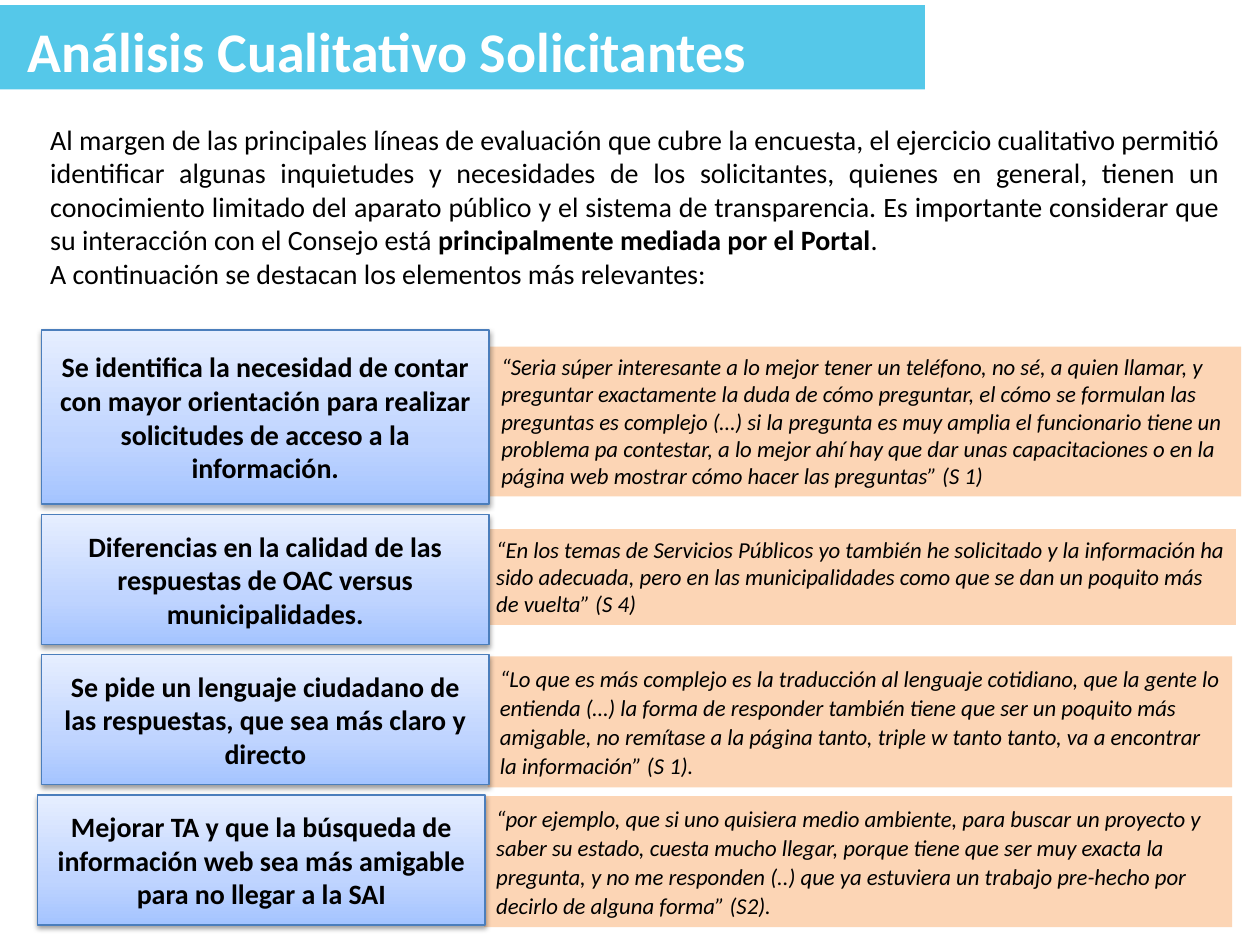
from lxml import etree
from pptx import Presentation
from pptx.dml.color import RGBColor
from pptx.enum.shapes import MSO_SHAPE
from pptx.enum.text import MSO_ANCHOR, PP_ALIGN
from pptx.oxml.ns import qn
from pptx.util import Pt

RECTANGLE = MSO_SHAPE.RECTANGLE
TOP, MIDDLE = MSO_ANCHOR.TOP, MSO_ANCHOR.MIDDLE
LEFT, CENTER, JUSTIFY = PP_ALIGN.LEFT, PP_ALIGN.CENTER, PP_ALIGN.JUSTIFY
FONT = "Calibri"
CYAN, PEACH, BLUE = "55C8E9", "FCD5B5", "4B7EBC"
BLACK, WHITE = "000000", "FFFFFF"
TOPIC_STOPS = [(0, "A4C4FF"), (35, "BFD4FF"), (100, "E6EEFF")]

TITLE = "Análisis Cualitativo Solicitantes"
# Each paragraph of the introduction: alignment and (text, bold) pieces
INTRO = [
    (JUSTIFY, [
        ("Al margen de las principales líneas de evaluación que cubre la encuesta, "
         "el ejercicio cualitativo permitió identificar algunas inquietudes y "
         "necesidades de los solicitantes, quienes en general, tienen un conocimiento "
         "limitado del aparato público y el sistema de transparencia. Es importante "
         "considerar que su interacción con el Consejo está ", False),
        ("principalmente mediada por el Portal", True),
        (". ", False),
    ]),
    (LEFT, [("A continuación se destacan los elementos más relevantes:", False)]),
]
# Topic, its left and height; quote, its (left, top, width, height); loose spacing
ROWS = [
    ("Se identifica la necesidad de contar con mayor orientación para realizar "
     "solicitudes de acceso a la información.", 23.8, 99.4,
     "“Seria súper interesante a lo mejor tener un teléfono, no sé, a quien llamar, "
     "y preguntar exactamente la duda de cómo preguntar, el cómo se formulan las "
     "preguntas es complejo (…) si la pregunta es muy amplia el funcionario tiene un "
     "problema pa contestar, a lo mejor ahí hay que dar unas capacitaciones o en la "
     "página web mostrar cómo hacer las preguntas” (S 1)",
     (279.4, 198, 429.8, 85.7), False),
    ("Diferencias en la calidad de las respuestas de OAC versus municipalidades.",
     23.8, 74.2,
     "“En los temas de Servicios Públicos yo también he solicitado y la información "
     "ha sido adecuada, pero en las municipalidades como que se dan un poquito más "
     "de vuelta” (S 4)",
     (276.5, 302.4, 429.8, 54.7), False),
    ("Se pide un lenguaje ciudadano de las respuestas, que sea más claro y directo",
     23.8, 74.2,
     "“Lo que es más complejo es la traducción al lenguaje cotidiano, que la gente lo "
     "entienda (…) la forma de responder también tiene que ser un poquito más "
     "amigable, no remítase a la página tanto, triple w tanto tanto, va a encontrar "
     "la información” (S 1).",
     (278.6, 375.1, 425.5, 74.9), True),
    ("Mejorar TA y que la búsqueda de información web sea más amigable para no "
     "llegar a la SAI", 21.6, 74.2,
     "“por ejemplo, que si uno quisiera medio ambiente, para buscar un proyecto y "
     "saber su estado, cuesta mucho llegar, porque tiene que ser muy exacta la "
     "pregunta, y no me responden (..) que ya estuviera un trabajo pre-hecho por "
     "decirlo de alguna forma” (S2).",
     (276.5, 455, 427.7, 74.9), True),
]
TOPICS_TOP, TOPIC_WIDTH, TOPIC_GAP = 188.6, 255.6, 6


def color(value):
    return RGBColor.from_string(value)


def style(font, size, value, bold=False, italic=False):
    font.name, font.size = FONT, Pt(size)
    font.bold, font.italic = bold, italic
    font.color.rgb = color(value)


def add_box(page, place, fill=None):
    box = page.shapes.add_shape(RECTANGLE, *map(Pt, place))
    box.shadow.inherit = False
    box.line.fill.background()
    if fill:
        box.fill.solid()
        box.fill.fore_color.rgb = color(fill)
    return box


def write(box, text, size, value, align, anchor, **look):
    frame = box.text_frame
    frame.text = text
    frame.vertical_anchor = anchor
    para = frame.paragraphs[0]
    para.alignment = align
    style(para.runs[0].font, size, value, **look)
    return para


def add_color(parent, value):
    return etree.SubElement(parent, qn("a:srgbClr"), val=value)


def shade(box):
    """Three-stop vertical gradient and a soft shadow below."""
    box.fill.gradient()
    box.fill.gradient_angle = 90
    properties = box._element.spPr
    stops = properties.find(".//" + qn("a:gsLst"))
    for stop in list(stops):
        stops.remove(stop)
    for position, value in TOPIC_STOPS:
        add_color(etree.SubElement(stops, qn("a:gs"), pos=str(position * 1000)), value)
    shadow = etree.SubElement(properties.find(qn("a:effectLst")), qn("a:outerShdw"),
                              blurRad="40000", dist="20000", dir="5400000",
                              rotWithShape="0")
    etree.SubElement(add_color(shadow, BLACK), qn("a:alpha"), val="38000")


def main():
    deck = Presentation()
    deck.slide_width, deck.slide_height = Pt(720), Pt(540)
    page = deck.slides.add_slide(deck.slide_layouts[6])

    # Title band
    add_box(page, (0, 2.9, 528.5, 48.2), CYAN)
    title = page.shapes.add_textbox(Pt(8.6), Pt(5.8), Pt(429.8), Pt(46))
    title.text_frame.word_wrap = False
    write(title, TITLE, 32, WHITE, LEFT, TOP, bold=True)

    # Introduction
    intro = page.shapes.add_textbox(Pt(21.6), Pt(66.2), Pt(682.6), Pt(106.6))
    frame = intro.text_frame
    frame.word_wrap = True
    for index, (align, pieces) in enumerate(INTRO):
        para = frame.add_paragraph() if index else frame.paragraphs[0]
        para.alignment = align
        for text, bold in pieces:
            span = para.add_run()
            span.text = text
            style(span.font, 16, BLACK, bold=bold)

    # Topics stacked on the left, each over the edge of its quote
    top = TOPICS_TOP
    for topic, left, height, quote, place, loose in ROWS:
        para = write(add_box(page, place, PEACH), quote, 13, BLACK, LEFT, TOP,
                     italic=True)
        if loose:
            para.line_spacing, para.space_after = 1.07, Pt(8)
        box = add_box(page, (left, top, TOPIC_WIDTH, height))
        shade(box)
        box.line.color.rgb = color(BLUE)
        box.line.width = Pt(0.75)
        write(box, topic, 16, BLACK, CENTER, MIDDLE, bold=True)
        top += height + TOPIC_GAP

    deck.save("out.pptx")


if __name__ == "__main__":
    main()
